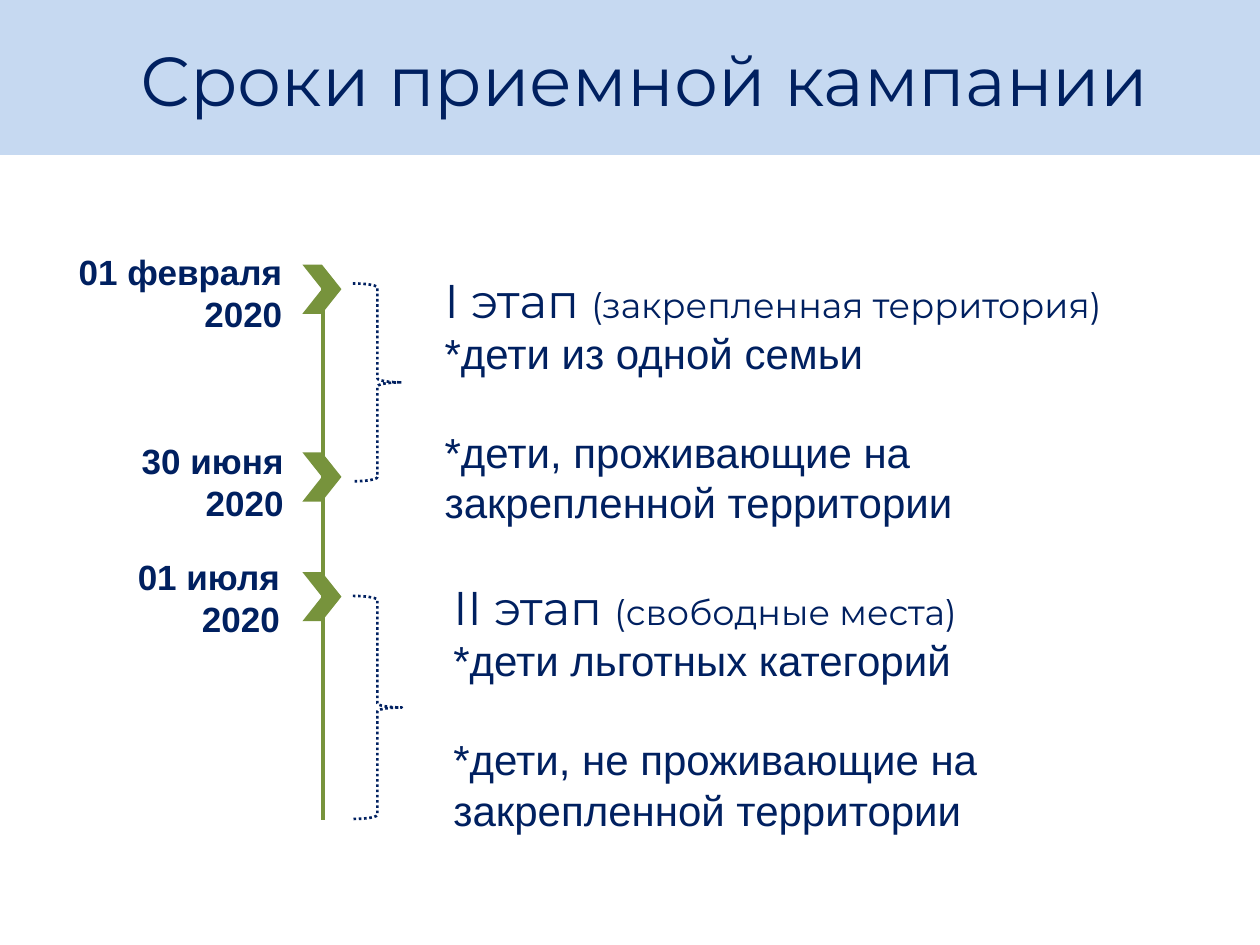
from lxml.etree import SubElement
from pptx import Presentation
from pptx.dml.color import RGBColor
from pptx.enum.dml import MSO_LINE
from pptx.enum.shapes import MSO_CONNECTOR, MSO_SHAPE as Shape
from pptx.enum.text import MSO_ANCHOR as Anchor, PP_ALIGN as Align
from pptx.oxml.ns import qn
from pptx.util import Inches, Pt

NAVY = RGBColor(0x00, 0x20, 0x60)
PALE_BLUE = RGBColor(0xC6, 0xD9, 0xF1)
GREEN = RGBColor(0x77, 0x93, 0x3C)

COLUMNS, ROWS = 100, 75
WIDTH, HEIGHT = Inches(10), Inches(7.5)
AXIS = 25.6
CHEVRON_WIDTH, CHEVRON_HEIGHT = 3.1, 3.9

# Chevron row; right edge, row and width of the date label; day
DATES = [
    (21, 23.4, 19.4, 18.3, "01 февраля"),
    (35.9, 23.5, 34.4, 13.4, "30 июня"),
    (45.4, 23.2, 43.6, 13.4, "01 июля"),
]
# Row and height of the brace; text box; stage, remark, groups of children
STAGES = [
    (22.5, 15.7, (34.3, 21, 63, 28.8), "I этап ", "(закрепленная территория)",
     ["*дети из одной семьи", "*дети, проживающие на", "закрепленной территории"]),
    (47.3, 17.7, (35, 45.4, 63, 24.7), "II этап ", "(свободные места)",
     ["*дети льготных категорий",
      "*дети, не проживающие на закрепленной территории"]),
]


def grid(column, row, *size):
    """Turn columns and rows of the grid into slide lengths."""
    pairs = zip((column, row, *size), (WIDTH / COLUMNS, HEIGHT / ROWS) * 2)
    return [round(count * step) for count, step in pairs]


def add_shape(slide, kind, place, fill=None, line=None):
    shape = slide.shapes.add_shape(kind, *grid(*place))
    shape.shadow.inherit = False
    if fill is None:
        shape.fill.background()
    else:
        shape.fill.solid()
        shape.fill.fore_color.rgb = fill
    if line is None:
        shape.line.fill.background()
    else:
        shape.line.color.rgb = line
        shape.line.width = Pt(1.5)
        shape.line.dash_style = MSO_LINE.ROUND_DOT
    return shape


def add_axis(slide, top, bottom):
    axis = slide.shapes.add_connector(
        MSO_CONNECTOR.STRAIGHT, *grid(AXIS, top, AXIS, bottom))
    axis.line.color.rgb = GREEN
    axis.line.width = Pt(2.25)
    SubElement(axis._element.spPr, qn("a:effectLst"))


def add_text(slide, place, paragraphs, font="Arial", size=24, bold=False,
             align=Align.LEFT, anchor=Anchor.TOP, wrap=True):
    """Add paragraphs, each a list of (text, own format) runs."""
    frame = slide.shapes.add_textbox(*grid(*place)).text_frame
    frame.word_wrap = wrap
    frame.vertical_anchor = anchor
    for index, runs in enumerate(paragraphs):
        paragraph = frame.add_paragraph() if index else frame.paragraphs[0]
        paragraph.alignment = align
        for text, own in runs:
            run = paragraph.add_run()
            run.text = text
            run.font.name = own.get("font", font)
            run.font.size = Pt(own.get("size", size))
            run.font.bold = bold
            run.font.color.rgb = NAVY
    return frame


def add_date(slide, chevron_row, right, row, width, day):
    add_shape(slide, Shape.CHEVRON,
              (24, chevron_row, CHEVRON_WIDTH, CHEVRON_HEIGHT), fill=GREEN)
    add_text(slide, (right - width, row, width, 7.7),
             [[(day, {})], [("2020", {})]],
             size=20, bold=True, align=Align.RIGHT, wrap=False)


def add_stage(slide, brace_row, brace_height, place, stage, remark, groups):
    add_shape(slide, Shape.RIGHT_BRACE, (28, brace_row, 3.9, brace_height), line=NAVY)
    heading = [(stage, {"font": "Montserrat", "size": 27}),
               (remark, {"font": "Montserrat", "size": 20})]
    frame = add_text(slide, place, [heading] + [[(group, {})] for group in groups])
    frame.paragraphs[2].space_before = Pt(27.6)


def main():
    presentation = Presentation()
    presentation.slide_width, presentation.slide_height = WIDTH, HEIGHT
    slide = presentation.slides.add_slide(presentation.slide_layouts[6])

    add_shape(slide, Shape.RECTANGLE, (0, 0, COLUMNS, 12.3), fill=PALE_BLUE)
    add_text(slide, (5.1, 0, 92.1, 12.5), [[("Сроки приемной кампании", {})]],
             font="Montserrat", size=39.6, align=Align.CENTER, anchor=Anchor.MIDDLE)
    add_axis(slide, 21.8, 65.1)
    for date in DATES:
        add_date(slide, *date)
    for stage in STAGES:
        add_stage(slide, *stage)

    presentation.save("out.pptx")


if __name__ == "__main__":
    main()
